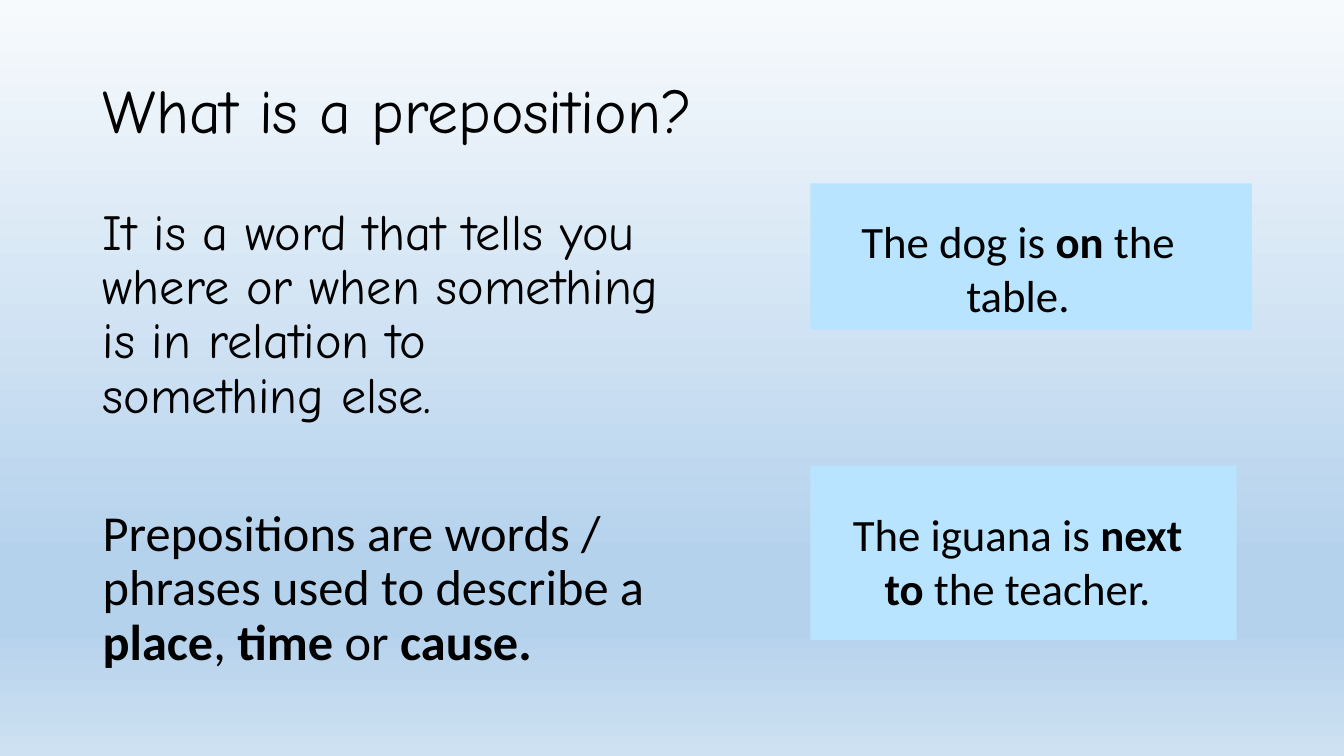
from lxml import etree
from pptx import Presentation
from pptx.dml.color import RGBColor
from pptx.enum.shapes import MSO_SHAPE
from pptx.enum.text import MSO_ANCHOR, MSO_AUTO_SIZE, PP_ALIGN
from pptx.oxml.ns import qn
from pptx.util import Pt

RECTANGLE = MSO_SHAPE.RECTANGLE
MIDDLE = MSO_ANCHOR.MIDDLE
GROW = MSO_AUTO_SIZE.SHAPE_TO_FIT_TEXT
LEFT, CENTER = PP_ALIGN.LEFT, PP_ALIGN.CENTER

INK = RGBColor(0x00, 0x00, 0x00)
CARD_BLUE = RGBColor(0xB9, 0xE4, 0xFF)
SKY_PALE = RGBColor(0xF7, 0xFA, 0xFD)
SKY_DEEP = RGBColor(0xB5, 0xD2, 0xEC)
SKY_SOFT = RGBColor(0xCE, 0xE1, 0xF2)
SKY_STOPS = [(0, SKY_PALE), (74, SKY_DEEP), (83, SKY_DEEP), (100, SKY_SOFT)]

HANDWRITTEN = "Comic Neue"
PLAIN = "Calibri"
MARGIN = 66.24
CARD_LEFT = 578.88


def paint_sky(slide):
    """Fill the background with the vertical four-stop gradient."""
    fill = slide.background.fill
    fill.gradient()
    fill.gradient_angle = 270
    stops = slide.element.find(".//" + qn("a:gsLst"))
    for stop in list(stops):
        stops.remove(stop)
    for percent, color in SKY_STOPS:
        stop = etree.SubElement(stops, qn("a:gs"), pos=str(percent * 1000))
        etree.SubElement(stop, qn("a:srgbClr"), val=str(color))


def add_frame(slide, box):
    """Add a wrapping text box at (left, top, width, height) and return its frame."""
    frame = slide.shapes.add_textbox(*map(Pt, box)).text_frame
    frame.word_wrap = True
    return frame


def write(paragraph, pieces, size, font, spacing=1.0, before=0, align=LEFT):
    """Write pieces into a paragraph, with every second piece bold."""
    paragraph.alignment = align
    paragraph.line_spacing = spacing
    paragraph.space_before = Pt(before)
    for index, piece in enumerate(pieces):
        run = paragraph.add_run()
        run.text = piece
        run.font.size = Pt(size)
        run.font.name = font
        run.font.bold = index % 2 == 1
        run.font.color.rgb = INK


def add_title(slide, box):
    """Place the question at the top of the slide."""
    frame = add_frame(slide, box)
    frame.vertical_anchor = MIDDLE
    write(frame.paragraphs[0], ["What is a preposition?"], 44, HANDWRITTEN, 0.9)


def add_definition(slide, box):
    """Place the two paragraphs that define a preposition."""
    frame = add_frame(slide, box)
    meaning = "It is a word that tells you where or when something is in relation to something else."
    uses = ["Prepositions are words / phrases used to describe a ", "place", ", ", "time", " or ", "cause."]
    write(frame.paragraphs[0], [meaning], 36, HANDWRITTEN, 0.9, 10)
    write(frame.add_paragraph(), uses, 36, PLAIN, 0.9, 59.5)


def add_example(slide, box, sentence_inset, sentence_width, pieces):
    """Place a blue card with an example sentence offset from its corner."""
    card = slide.shapes.add_shape(RECTANGLE, *map(Pt, box))
    card.shadow.inherit = False
    card.fill.solid()
    card.fill.fore_color.rgb = CARD_BLUE
    card.line.fill.background()
    left, top = box[0] + sentence_inset[0], box[1] + sentence_inset[1]
    frame = add_frame(slide, (left, top, sentence_width, 85))
    frame.auto_size = GROW
    write(frame.paragraphs[0], pieces, 32, PLAIN, align=CENTER)


def main():
    """Build and save the slide."""
    deck = Presentation()
    deck.slide_width, deck.slide_height = Pt(960), Pt(540)
    slide = deck.slides.add_slide(deck.slide_layouts[6])
    paint_sky(slide)
    add_title(slide, (MARGIN, 28.8, 828, 104.4))
    add_definition(slide, (MARGIN, 144, 414, 342.72))
    add_example(slide, (CARD_LEFT, 131.04, 315.36, 104.4), (-9.36, 18), 315.36,
                ["The dog is ", "on ", "the table."])
    add_example(slide, (CARD_LEFT, 332.64, 304.56, 124.56), (15.12, 25.92), 265.68,
                ["The iguana is ", "next to", " the teacher."])
    deck.save("out.pptx")


if __name__ == "__main__":
    main()
